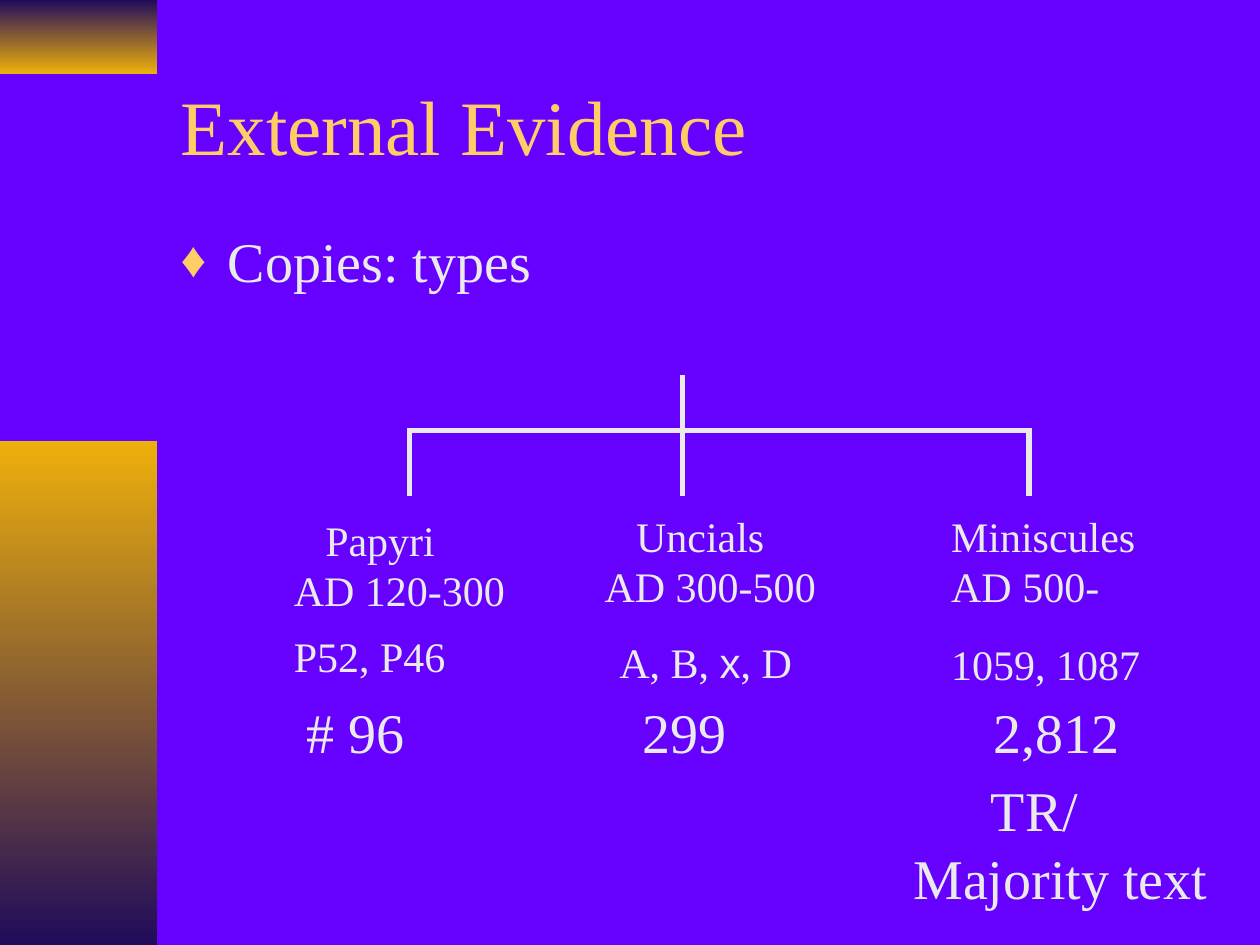
"""Build the External Evidence slide on a grid of 120 columns by 90 rows."""
from dataclasses import dataclass

import pptx
import pptx.dml.color
import pptx.enum.shapes
import pptx.enum.text
import pptx.oxml
import pptx.oxml.ns
import pptx.util

VIOLET = pptx.dml.color.RGBColor(0x66, 0x00, 0xFF)
NAVY = pptx.dml.color.RGBColor(0x20, 0x0B, 0x5B)
GOLD = pptx.dml.color.RGBColor(0xEE, 0xB0, 0x0B)
SAND = pptx.dml.color.RGBColor(0xFF, 0xCC, 0x66)
PALE = pptx.dml.color.RGBColor(0xEA, 0xEA, 0xEA)
SERIF, SANS = "Times New Roman", "Arial"
COLUMNS, ROWS = 120, 90
WIDTH, HEIGHT = pptx.util.Inches(10), pptx.util.Inches(7.5)


@dataclass(frozen=True)
class Area:
    left: float
    top: float
    width: float
    height: float

    def lengths(self) -> tuple[int, int, int, int]:
        return (across(self.left), down(self.top),
                across(self.width), down(self.height))


@dataclass(frozen=True)
class Line:
    runs: tuple[tuple[str, str], ...]
    indent: float = 0


@dataclass(frozen=True)
class Label:
    area: Area
    lines: tuple[Line, ...]
    size: int = 24


@dataclass(frozen=True)
class Band:
    area: Area
    top_color: pptx.dml.color.RGBColor
    bottom_color: pptx.dml.color.RGBColor


@dataclass(frozen=True)
class Branch:
    start: tuple[float, float]
    end: tuple[float, float]


def across(columns: float) -> int:
    return round(WIDTH * columns / COLUMNS)


def down(rows: float) -> int:
    return round(HEIGHT * rows / ROWS)


def serif(text: str, indent: float = 0) -> Line:
    return Line(((text, SERIF),), indent)


BANDS = (
    Band(Area(0, 0, 15, 7), NAVY, GOLD),
    Band(Area(0, 42, 15, 48), GOLD, NAVY),
)
PAPYRI, UNCIALS, MINISCULES = 39, 65, 98
STEM_TOP, BAR, DROP_END = 36, 41, 47
BRANCHES = (
    Branch((UNCIALS, STEM_TOP), (UNCIALS, BAR)),
    Branch((PAPYRI, BAR), (MINISCULES, BAR)),
    *(Branch((column, BAR), (column, DROP_END))
      for column in (PAPYRI, UNCIALS, MINISCULES)),
)
LABELS = (
    Label(Area(26.8, 48.4, 23, 10.8), (serif("Papyri", 3), serif("AD 120-300"))),
    Label(Area(56.4, 48, 23, 10.8), (serif("Uncials", 3), serif("AD 300-500"))),
    Label(Area(89.4, 48, 22, 10.8), (serif("Miniscules"), serif("AD 500-"))),
    Label(Area(26.8, 59.5, 18, 6), (serif("P52, P46"),)),
    Label(Area(57.8, 60, 20, 6),
          (Line((("A, B, ", SERIF), ("x", SANS), (", D", SERIF))),)),
    Label(Area(89.4, 60.2, 21, 6), (serif("1059, 1087"),)),
    Label(Area(28, 65.8, 16, 7.6), (serif("# 96"),), 32),
    Label(Area(60, 65.8, 16, 7.6), (serif("299"),), 32),
    Label(Area(93.4, 65.8, 18, 7.6), (serif("2,812"),), 32),
    Label(Area(85.8, 73.3, 33, 14), (serif("TR/", 7.4), serif("Majority text")), 32),
)


def add_run(paragraph, text: str, font_name: str, size: int, color) -> None:
    run = paragraph.add_run()
    run.text = text
    run.font.name = font_name
    run.font.size = pptx.util.Pt(size)
    run.font.color.rgb = color


def draw_band(slide, band: Band) -> None:
    shape = slide.shapes.add_shape(
        pptx.enum.shapes.MSO_SHAPE.RECTANGLE, *band.area.lengths())
    shape.shadow.inherit = False
    shape.line.fill.background()
    shape.fill.gradient()
    shape.fill.gradient_angle = 270
    for stop, color in zip(shape.fill.gradient_stops,
                           (band.top_color, band.bottom_color)):
        stop.color.rgb = color


def draw_branch(slide, branch: Branch) -> None:
    (left, top), (right, bottom) = branch.start, branch.end
    connector = slide.shapes.add_connector(
        pptx.enum.shapes.MSO_CONNECTOR.STRAIGHT,
        across(left), down(top), across(right), down(bottom))
    connector.line.color.rgb = PALE
    connector.line.width = pptx.util.Pt(3)
    properties = connector._element.spPr
    properties.get_or_add_ln().set("cap", "sq")
    properties.append(pptx.oxml.parse_xml(
        f"<a:effectLst {pptx.oxml.ns.nsdecls('a')}/>"))


def draw_label(slide, label: Label) -> None:
    frame = slide.shapes.add_textbox(*label.area.lengths()).text_frame
    frame.word_wrap = True
    frame.auto_size = pptx.enum.text.MSO_AUTO_SIZE.NONE
    for index, line in enumerate(label.lines):
        paragraph = frame.add_paragraph() if index else frame.paragraphs[0]
        if line.indent:
            paragraph._p.get_or_add_pPr().set("marL", str(across(line.indent)))
        for text, font_name in line.runs:
            add_run(paragraph, text, font_name, label.size, PALE)


def place(placeholder, area: Area, anchor):
    (placeholder.left, placeholder.top,
     placeholder.width, placeholder.height) = area.lengths()
    frame = placeholder.text_frame
    frame.auto_size = pptx.enum.text.MSO_AUTO_SIZE.NONE
    frame.vertical_anchor = anchor
    paragraph = frame.paragraphs[0]
    paragraph.alignment = pptx.enum.text.PP_ALIGN.LEFT
    paragraph.space_before = pptx.util.Pt(0)
    return paragraph


def add_diamond_bullet(paragraph) -> None:
    properties = paragraph._p.get_or_add_pPr()
    hanging = across(4.5)
    properties.set("marL", str(hanging))
    properties.set("indent", str(-hanging))
    namespace = pptx.oxml.ns.nsdecls("a")
    for bullet in (
        f'<a:buClr {namespace}><a:srgbClr val="{SAND}"/></a:buClr>',
        f'<a:buSzPct {namespace} val="90000"/>',
        f'<a:buFont {namespace} typeface="{SERIF}"/>',
        f'<a:buChar {namespace} char="♦"/>',
    ):
        properties.append(pptx.oxml.parse_xml(bullet))


def main() -> None:
    presentation = pptx.Presentation()
    presentation.slide_width, presentation.slide_height = WIDTH, HEIGHT
    slide = presentation.slides.add_slide(presentation.slide_layouts[1])
    slide.background.fill.solid()
    slide.background.fill.fore_color.rgb = VIOLET

    heading = place(slide.shapes.title, Area(16, 4, 102, 15.8),
                    pptx.enum.text.MSO_ANCHOR.MIDDLE)
    add_run(heading, "External Evidence", SERIF, 44, SAND)
    topic = place(slide.placeholders[1], Area(16, 21, 102, 9),
                  pptx.enum.text.MSO_ANCHOR.TOP)
    add_diamond_bullet(topic)
    add_run(topic, "Copies: types", SERIF, 32, PALE)

    for band in BANDS:
        draw_band(slide, band)
    for branch in BRANCHES:
        draw_branch(slide, branch)
    for label in LABELS:
        draw_label(slide, label)
    presentation.save("out.pptx")


if __name__ == "__main__":
    main()
